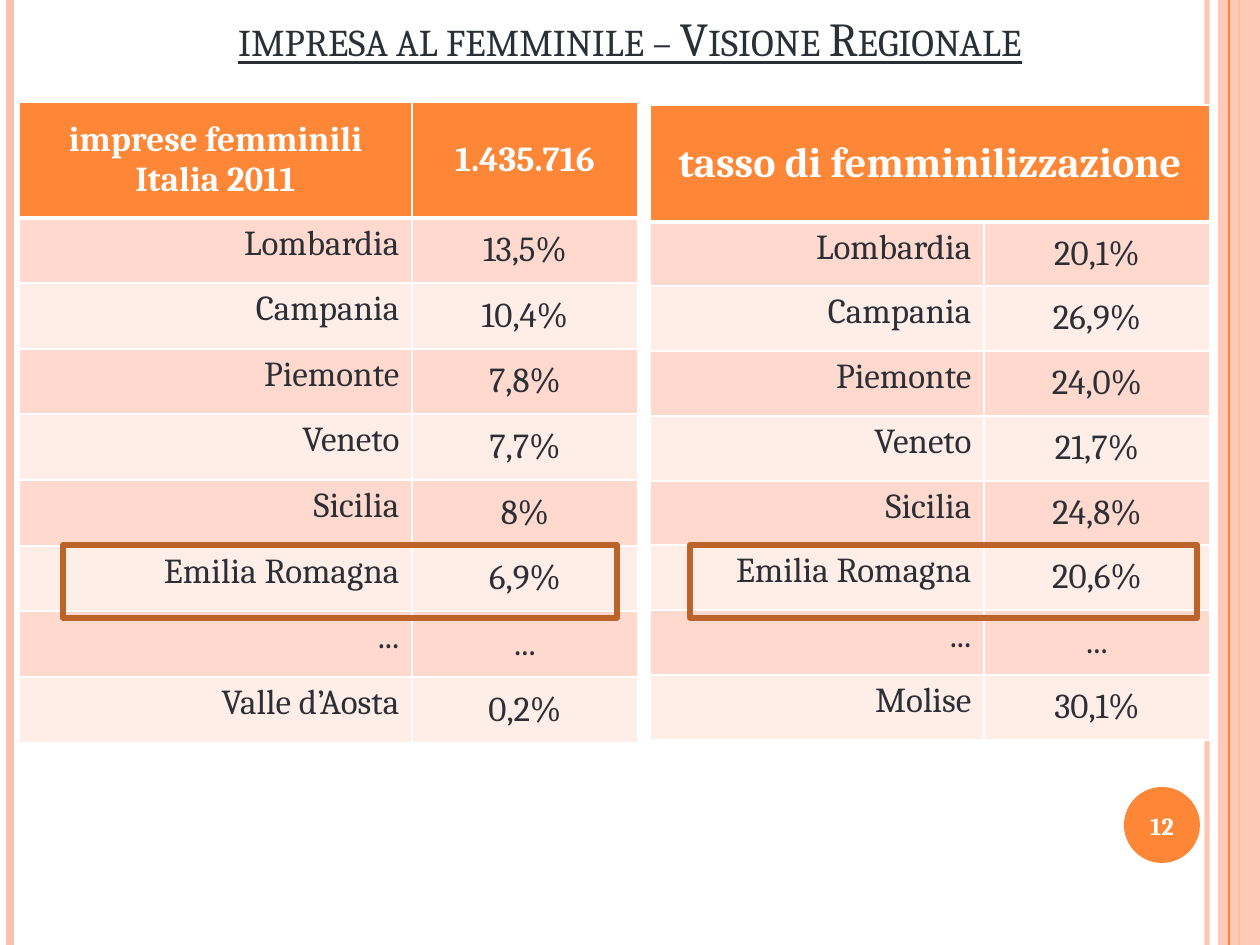
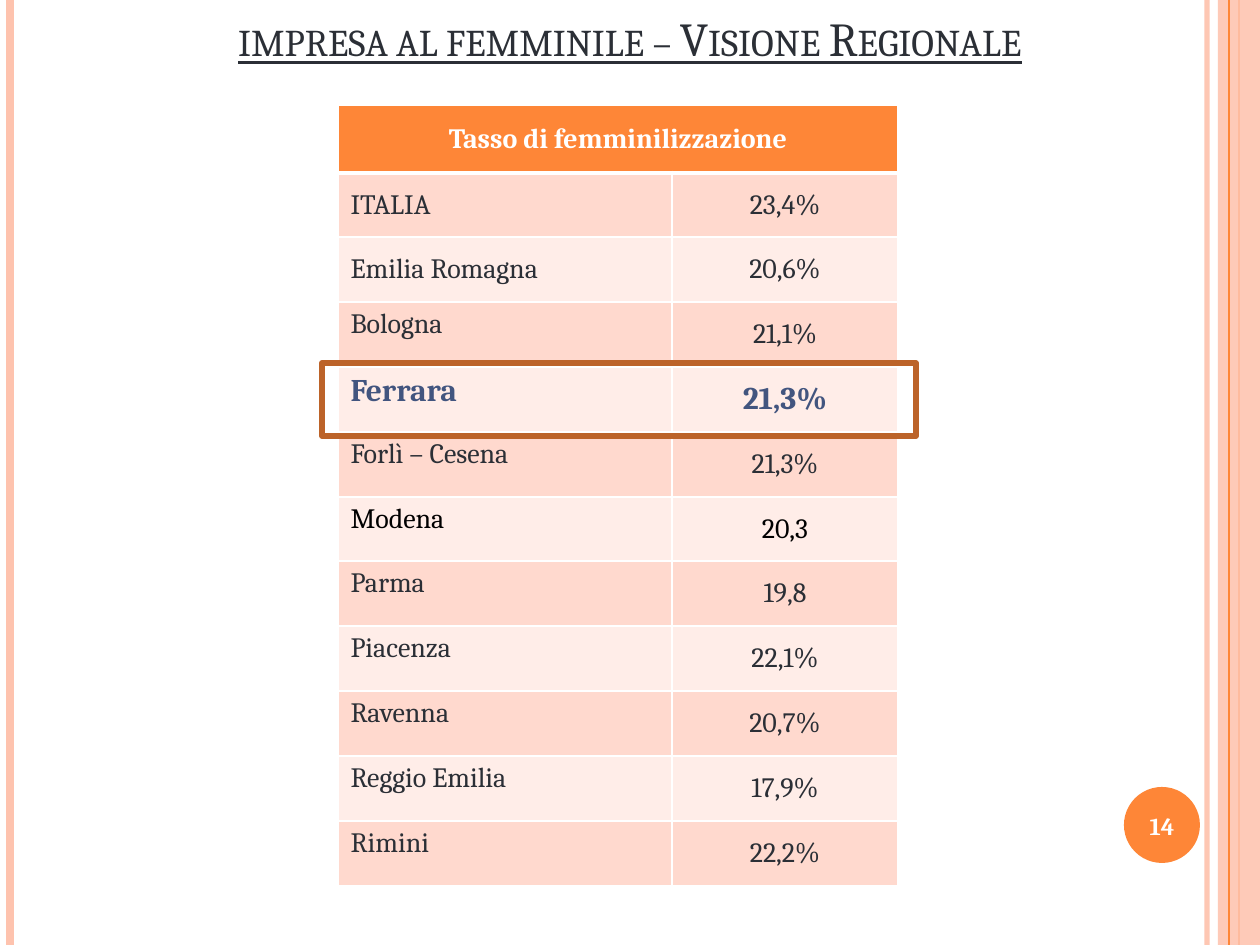
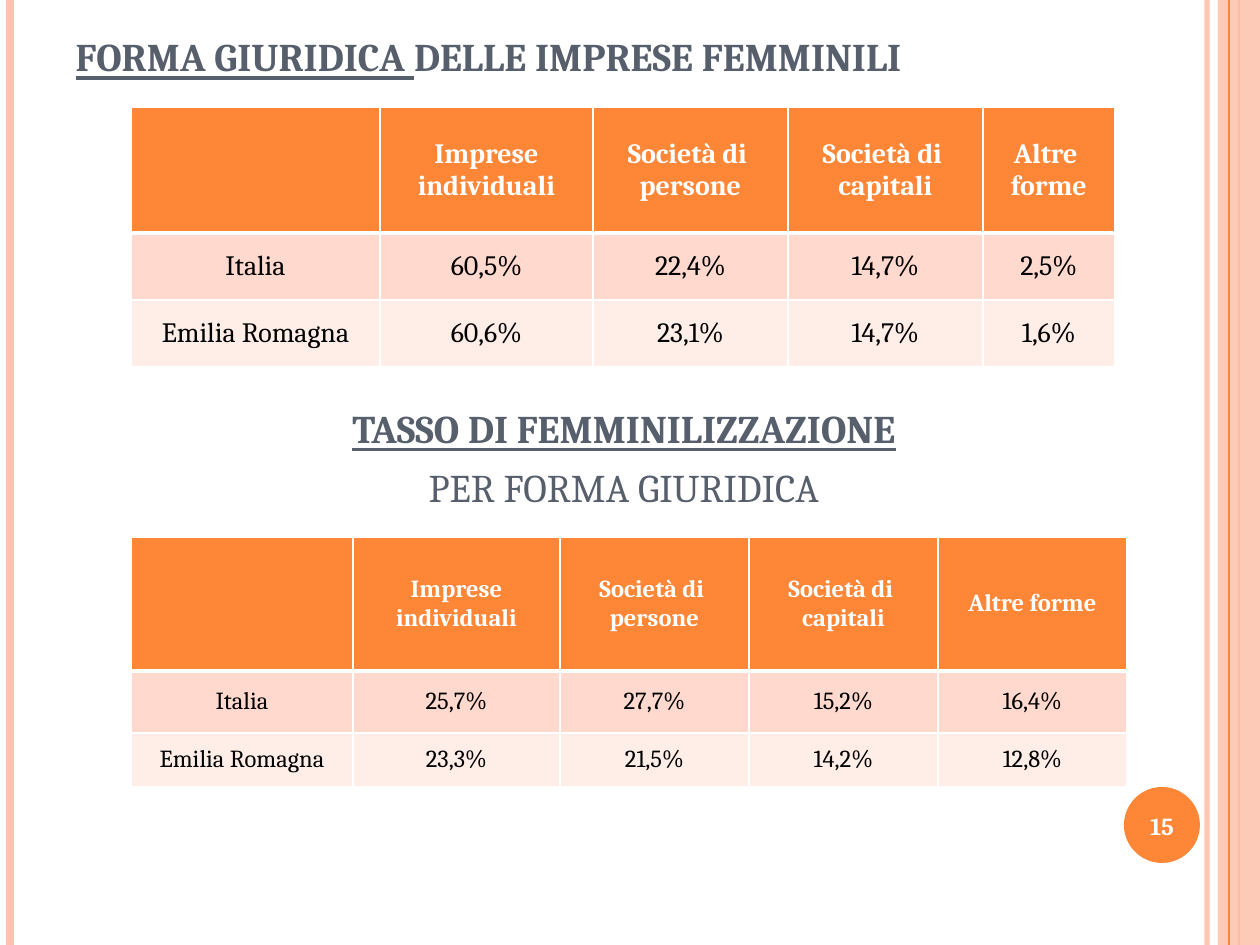
from lxml.etree import SubElement
from pptx import Presentation
from pptx.dml.color import RGBColor
from pptx.enum.shapes import MSO_CONNECTOR, MSO_SHAPE
from pptx.enum.text import MSO_ANCHOR as Anchor, MSO_AUTO_SIZE, PP_ALIGN as Align
from pptx.oxml.ns import qn
from pptx.util import Emu, Pt

PX = 914400 / 126
WIDTH, HEIGHT = 1260, 945
FONT = "Cambria"
TITLE_ONLY = 5

WHITE = RGBColor(0xFF, 0xFF, 0xFF)
BLACK = RGBColor(0x00, 0x00, 0x00)
ORANGE = RGBColor(0xFE, 0x86, 0x37)
PEACH = RGBColor(0xFE, 0xC3, 0xAE)
BAND_DARK = RGBColor(0xFF, 0xD9, 0xCE)
BAND_LIGHT = RGBColor(0xFF, 0xED, 0xE8)
BROWN = RGBColor(0xBC, 0x63, 0x29)
INK = RGBColor(0x2B, 0x2F, 0x36)
SLATE = RGBColor(0x57, 0x5F, 0x6D)
BLUE = RGBColor(0x42, 0x55, 0x7F)


def share(total, count):
    """Split a length into whole, nearly equal parts."""
    return [total * (i + 1) // count - total * i // count for i in range(count)]


# Content: vertical rules as (x, colour, points, opacity)
LEFT_RULES = [(1207, PEACH, 3, 93), (10, PEACH, 4.5, 100), (1239, ORANGE, 1.5, 100)]
RIGHT_RULE = (1229, ORANGE, 0.75, 100)

REGION_TITLE = {
    "box": (63, 6, 1134, 66),
    "lines": [[("impresa al femminile – Visione Regionale", {"underline": True})]],
    "align": Align.CENTER, "anchor": Anchor.BOTTOM,
    "format": {"size": Pt(27), "color": INK},
}
LEGAL_FORMAT = {"size": Pt(28), "color": SLATE}
STRONG = {"bold": True, "underline": True}
LEGAL_TITLE = {
    "box": (63, 30, 1134, 58),
    "lines": [[("forma giuridica ", STRONG), ("delle imprese femminili", {"bold": True})]],
    "align": Align.LEFT, "anchor": Anchor.BOTTOM, "format": LEGAL_FORMAT,
}
RATE_HEADING = {
    "box": (57, 374, 1134, 158),
    "lines": [[("tasso di femminilizzazione", STRONG)], [("per forma giuridica", {})]],
    "align": Align.CENTER, "anchor": Anchor.MIDDLE, "format": LEGAL_FORMAT,
}

REGION_SHARES = {
    "at": (19, 102), "columns": [393, 226], "heights": [116] + share(525, 8),
    "header_size": 20, "size": 20, "color": INK,
    "label": (Align.RIGHT, Anchor.TOP),
    "rows": [
        ("imprese femminili\nItalia 2011", "1.435.716"),
        ("Lombardia", "13,5%"), ("Campania", "10,4%"), ("Piemonte", "7,8%"),
        ("Veneto", "7,7%"), ("Sicilia", "8%"), ("Emilia Romagna", "6,9%"),
        ("...", "..."), ("Valle d’Aosta", "0,2%"),
    ],
}
REGION_RATES = {
    "at": (650, 105), "columns": [334, 226], "heights": [117] + share(518, 8),
    "header_size": 24, "size": 20, "color": INK,
    "label": (Align.RIGHT, Anchor.TOP),
    "rows": [
        ("tasso di femminilizzazione",),
        ("Lombardia", "20,1%"), ("Campania", "26,9%"), ("Piemonte", "24,0%"),
        ("Veneto", "21,7%"), ("Sicilia", "24,8%"), ("Emilia Romagna", "20,6%"),
        ("...", "..."), ("Molise", "30,1%"),
    ],
}
PROVINCE_RATES = {
    "at": (338, 105), "columns": [334, 226], "heights": [68] + share(713, 11),
    "header_size": 16, "size": 16, "color": INK,
    "label": (Align.LEFT, Anchor.TOP), "centred_labels": ("ITALIA", "Emilia Romagna"),
    "special": {
        "Ferrara": {"size": Pt(18), "color": BLUE, "bold": True},
        "Modena": {"color": BLACK},
    },
    "rows": [
        ("Tasso di femminilizzazione",),
        ("ITALIA", "23,4%"), ("Emilia Romagna", "20,6%"), ("Bologna", "21,1%"),
        ("Ferrara", "21,3%"), ("Forlì – Cesena", "21,3%"), ("Modena", "20,3"),
        ("Parma", "19,8"), ("Piacenza", "22,1%"), ("Ravenna", "20,7%"),
        ("Reggio Emilia", "17,9%"), ("Rimini", "22,2%"),
    ],
}
LEGAL_HEADER = ("", "Imprese\nindividuali", "Società di \npersone", "Società di \ncapitali")
LEGAL_SHARES = {
    "at": (131, 107), "columns": [249, 213, 195, 195, 132], "heights": [126, 67, 67],
    "header_size": 16, "size": 16, "color": BLACK,
    "label": (Align.CENTER, Anchor.MIDDLE),
    "rows": [
        LEGAL_HEADER + ("Altre \nforme",),
        ("Italia", "60,5%", "22,4%", "14,7%", "2,5%"),
        ("Emilia Romagna", "60,6%", "23,1%", "14,7%", "1,6%"),
    ],
}
LEGAL_RATES = {
    "at": (131, 537), "columns": [222, 207, 189, 189, 189], "heights": [134, 62, 54],
    "header_size": 14, "size": 14, "color": BLACK,
    "label": (Align.CENTER, Anchor.MIDDLE),
    "rows": [
        LEGAL_HEADER + ("Altre forme",),
        ("Italia", "25,7%", "27,7%", "15,2%", "16,4%"),
        ("Emilia Romagna", "23,3%", "21,5%", "14,2%", "12,8%"),
    ],
}

SLIDES = [
    {"number": "12", "title": REGION_TITLE, "tables": [REGION_SHARES, REGION_RATES],
     "highlights": [(63, 545, 554, 73), (690, 545, 507, 73)]},
    {"number": "14", "title": REGION_TITLE, "tables": [PROVINCE_RATES],
     "highlights": [(322, 363, 594, 73)]},
    {"number": "15", "title": LEGAL_TITLE, "tables": [LEGAL_SHARES, LEGAL_RATES],
     "heading": RATE_HEADING},
]


# Basic helpers
def px(*lengths):
    return [Emu(round(length * PX)) for length in lengths]


def format_font(font, values):
    for name, value in {"name": FONT, **values}.items():
        if name == "color":
            font.color.rgb = value
        else:
            setattr(font, name, value)


def set_opacity(shape, percent):
    color = shape._element.spPr.find(".//" + qn("a:srgbClr"))
    SubElement(color, qn("a:alpha"), val=str(percent * 1000))


def add_shape(slide, kind, box, fill=None, line=None, points=0):
    shape = slide.shapes.add_shape(kind, *px(*box))
    shape.shadow.inherit = False
    if fill is None:
        shape.fill.background()
    else:
        shape.fill.solid()
        shape.fill.fore_color.rgb = fill
    if line is None:
        shape.line.fill.background()
    else:
        shape.line.color.rgb = line
        shape.line.width = Pt(points)
    return shape


def write_heading(shape, heading, small_caps=True):
    shape.left, shape.top, shape.width, shape.height = px(*heading["box"])
    frame = shape.text_frame
    frame.word_wrap = True
    frame.auto_size = MSO_AUTO_SIZE.NONE
    frame.vertical_anchor = heading["anchor"]
    for index, line in enumerate(heading["lines"]):
        paragraph = frame.add_paragraph() if index else frame.paragraphs[0]
        paragraph.alignment = heading["align"]
        for text, extra in line:
            run = paragraph.add_run()
            run.text = text
            format_font(run.font, {**heading["format"], **extra})
            if small_caps:
                run.font._element.set("cap", "small")


# Shared side bands and number disc
def add_rule(slide, x, color, points, opacity):
    rule = slide.shapes.add_connector(MSO_CONNECTOR.STRAIGHT, *px(x, 0, x, HEIGHT))
    rule.line.color.rgb = color
    rule.line.width = Pt(points)
    SubElement(rule._element.spPr, qn("a:effectLst"))
    if opacity < 100:
        set_opacity(rule, opacity)


def add_bands(slide):
    for rule in LEFT_RULES:
        add_rule(slide, *rule)
    band = add_shape(slide, MSO_SHAPE.RECTANGLE, (1218, 0, 42, HEIGHT), PEACH)
    set_opacity(band, 87)
    add_rule(slide, *RIGHT_RULE)
    add_shape(slide, MSO_SHAPE.OVAL, (1124, 787, 76, 76), ORANGE)


def add_number(slide, number):
    write_heading(slide.shapes.add_textbox(0, 0, 0, 0), {
        "box": (1120, 790, 84, 72), "lines": [[(number, {"bold": True})]],
        "align": Align.CENTER, "anchor": Anchor.MIDDLE,
        "format": {"size": Pt(14), "color": WHITE},
    }, small_caps=False)


# Tables
def set_borders(cell, row):
    points = {"L": 1, "R": 1, "T": 3 if row == 1 else 1, "B": 3 if row == 0 else 1}
    for side, width in points.items():
        line = SubElement(cell._tc.get_or_add_tcPr(), qn("a:ln" + side), w=str(Pt(width)))
        fill = SubElement(line, qn("a:solidFill"))
        SubElement(fill, qn("a:srgbClr"), val=str(WHITE))


def cell_style(data, row, column):
    """Return alignment, anchor and font values of one cell."""
    if row == 0:
        values = {"size": Pt(data["header_size"]), "color": WHITE, "bold": True}
        return Align.CENTER, Anchor.MIDDLE, values
    label = data["rows"][row][0]
    values = {"size": Pt(data["size"]), "color": data["color"], "bold": False}
    values.update(data.get("special", {}).get(label, {}))
    align, anchor = data["label"] if column == 0 else (Align.CENTER, Anchor.MIDDLE)
    if label in data.get("centred_labels", ()):
        anchor = Anchor.MIDDLE
    return align, anchor, values


def add_table(slide, data):
    columns, heights, rows = data["columns"], data["heights"], data["rows"]
    box = px(*data["at"], sum(columns), sum(heights))
    table = slide.shapes.add_table(len(rows), len(columns), *box).table
    for column, width in zip(table.columns, px(*columns)):
        column.width = width
    for row, height in zip(table.rows, px(*heights)):
        row.height = height
    if len(rows[0]) == 1:
        table.cell(0, 0).merge(table.cell(0, len(columns) - 1))
    for r in range(len(rows)):
        for c in range(len(columns)):
            cell = table.cell(r, c)
            set_borders(cell, r)
            cell.fill.solid()
            cell.fill.fore_color.rgb = (
                ORANGE if r == 0 else BAND_DARK if r % 2 else BAND_LIGHT)
            if c >= len(rows[r]):
                continue
            align, cell.vertical_anchor, values = cell_style(data, r, c)
            cell.text_frame.text = rows[r][c]
            for paragraph in cell.text_frame.paragraphs:
                paragraph.alignment = align
                for run in paragraph.runs:
                    format_font(run.font, values)


def main():
    presentation = Presentation()
    presentation.slide_width, presentation.slide_height = px(WIDTH, HEIGHT)
    for content in SLIDES:
        slide = presentation.slides.add_slide(presentation.slide_layouts[TITLE_ONLY])
        add_bands(slide)
        write_heading(slide.shapes.title, content["title"])
        for data in content["tables"]:
            add_table(slide, data)
        if "heading" in content:
            write_heading(slide.shapes.add_textbox(0, 0, 0, 0), content["heading"])
        for box in content.get("highlights", []):
            add_shape(slide, MSO_SHAPE.RECTANGLE, box, line=BROWN, points=3.25)
        add_number(slide, content["number"])
    presentation.save("out.pptx")


if __name__ == "__main__":
    main()
